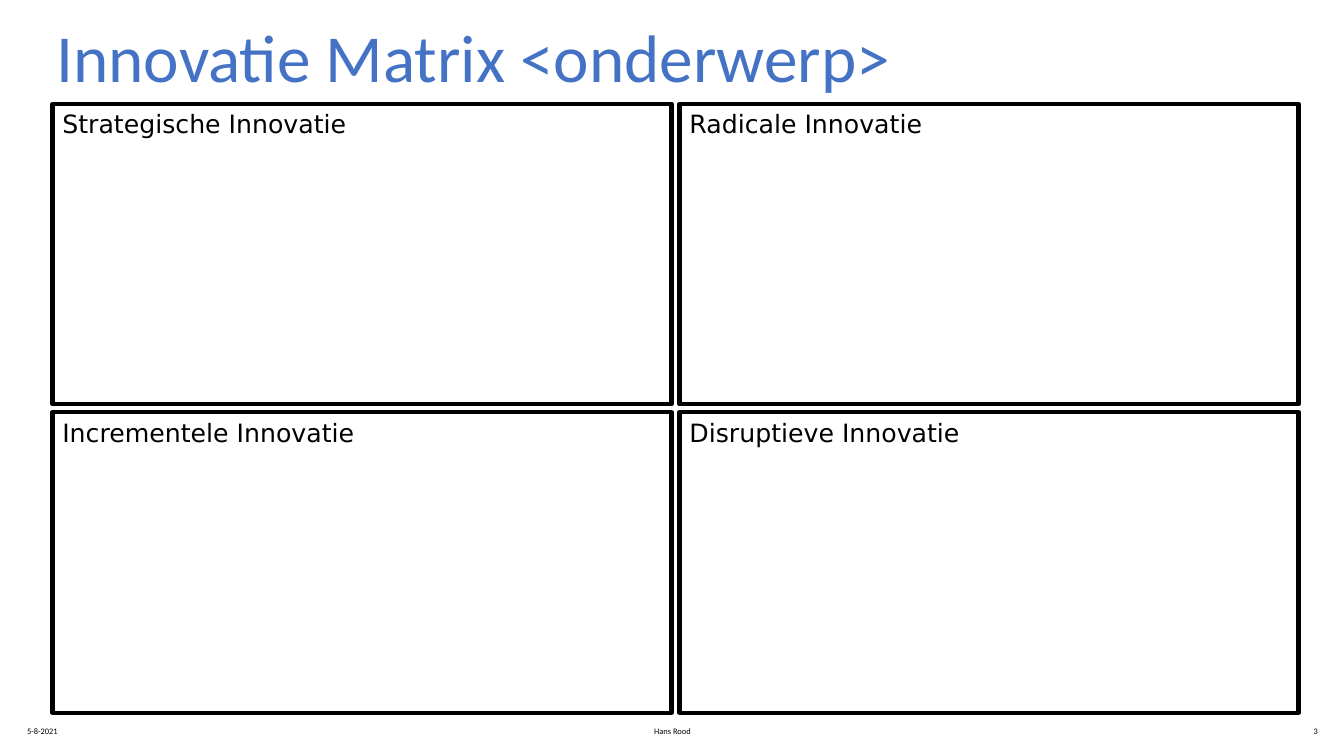
from pptx import Presentation
from pptx.dml.color import RGBColor
from pptx.enum.shapes import MSO_SHAPE
from pptx.enum.text import MSO_ANCHOR, MSO_AUTO_SIZE, PP_ALIGN
from pptx.util import Inches, Pt

COLORS = {"title": "4472C4", "ink": "000000", "paper": "FFFFFF"}
QUADRANTS = [
    ["Strategische Innovatie", "Radicale Innovatie"],
    ["Incrementele Innovatie", "Disruptieve Innovatie"],
]
QUADRANT_WIDTH, QUADRANT_HEIGHT = 6.14, 2.98
GAP = 0.08
MATRIX_LEFT, MATRIX_TOP = 0.52, 1.03
FOOTER = [
    ("5-8-2021", 0.17, 3, PP_ALIGN.LEFT),
    ("Hans Rood", 4.42, 4.5, PP_ALIGN.CENTER),
    ("3", 10.17, 3, PP_ALIGN.RIGHT),
]


def color(name):
    return RGBColor.from_string(COLORS[name])


def write(box, text, size, font="Calibri", ink="ink",
          align=PP_ALIGN.LEFT, anchor=MSO_ANCHOR.TOP):
    frame = box.text_frame
    frame.word_wrap = True
    frame.auto_size = MSO_AUTO_SIZE.NONE
    frame.vertical_anchor = anchor
    para = frame.paragraphs[0]
    para.alignment = align
    span = para.add_run()
    span.text = text
    span.font.size = Pt(size)
    span.font.name = font
    span.font.color.rgb = color(ink)


def add_title(page, text):
    title = page.shapes.title
    title.left, title.top = Inches(0.46), Inches(0.1)
    title.width, title.height = Inches(11.37), Inches(0.91)
    write(title, text, 48, ink="title")


def add_footer(page, text, left, width, align):
    box = page.shapes.add_textbox(Inches(left), Inches(7.05), Inches(width), Inches(0.4))
    write(box, text, 6, align=align, anchor=MSO_ANCHOR.MIDDLE)


def add_quadrant(page, text, row, column):
    left = MATRIX_LEFT + column * (QUADRANT_WIDTH + GAP)
    top = MATRIX_TOP + row * (QUADRANT_HEIGHT + GAP)
    box = page.shapes.add_shape(
        MSO_SHAPE.RECTANGLE, Inches(left), Inches(top),
        Inches(QUADRANT_WIDTH), Inches(QUADRANT_HEIGHT))
    box.shadow.inherit = False
    box.fill.solid()
    box.fill.fore_color.rgb = color("paper")
    box.line.color.rgb = color("ink")
    box.line.width = Pt(3)
    write(box, text, 18, font="DejaVu Sans")


def main():
    """Build the innovation matrix slide."""
    deck = Presentation()
    deck.slide_width, deck.slide_height = Inches(13.33), Inches(7.5)
    page = deck.slides.add_slide(deck.slide_layouts[5])
    add_title(page, "Innovatie Matrix <onderwerp>")
    for text, left, width, align in FOOTER:
        add_footer(page, text, left, width, align)
    for row, names in enumerate(QUADRANTS):
        for column, name in enumerate(names):
            add_quadrant(page, name, row, column)
    deck.save("out.pptx")


if __name__ == "__main__":
    main()
